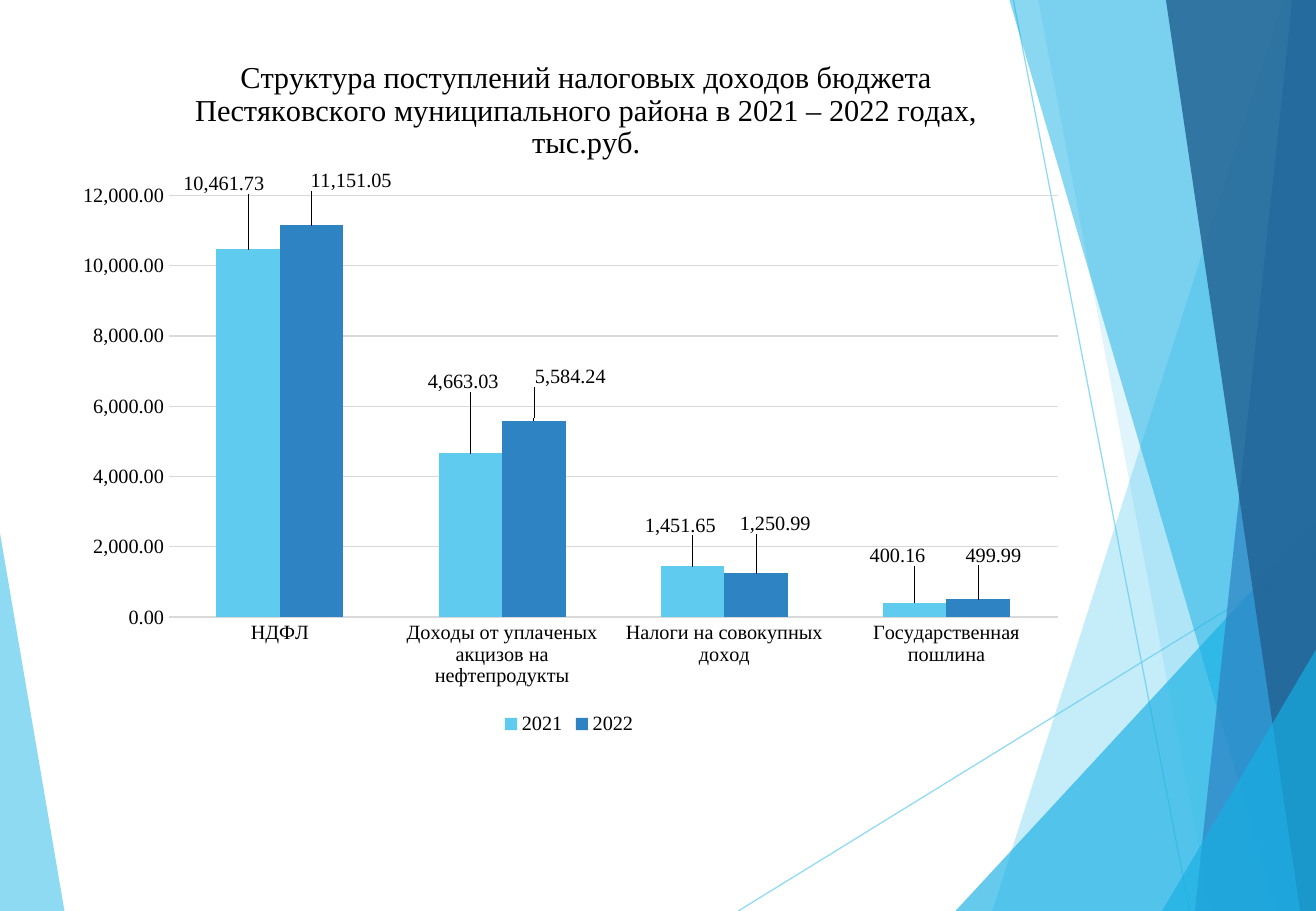
from dataclasses import dataclass

from lxml import etree
from pptx import Presentation
from pptx import util as u
from pptx.chart.data import CategoryChartData
from pptx.dml.color import RGBColor
from pptx.enum import chart as charts, shapes
from pptx.oxml import ns


@dataclass
class Theme:
    font: str = "Times New Roman"
    ink: str = "000000"
    grid: str = "D9D9D9"
    sky: str = "5FCBEF"
    cyan: str = "17B0E4"
    blue: str = "2E83C3"
    navy: str = "226292"
    title_size: int = 18
    label_size: int = 12


theme = Theme()

deck = Presentation()
deck.slide_width, deck.slide_height = u.Inches(10.83), u.Inches(7.5)
page = deck.slides.add_slide(deck.slide_layouts[6])


def at(x, y):
    return round(deck.slide_width * x / 100), round(deck.slide_height * y / 100)


def paint(fill, color, opacity):
    fill.solid()
    fill.fore_color.rgb = RGBColor.from_string(color)
    for tint in fill._xPr.iter(ns.qn("a:srgbClr")):
        etree.SubElement(tint, ns.qn("a:alpha"), val=str(opacity * 1000))


LEFT, RIGHT = 0, 100
rays = [((56.1, 100), (100, 60.9)), ((77, 0), (90.4, 100))]
facets = [
    (LEFT, (0, 58.5), (4.9, 100), theme.sky, 70),
    (RIGHT, (97.5, 0), (75.4, 100), theme.sky, 36),
    (RIGHT, (78.9, 0), (92, 100), theme.sky, 20),
    (RIGHT, (100, 57.2), (72.6, 100), theme.cyan, 66),
    (RIGHT, (76.7, 0), (97, 100), theme.cyan, 50),
    (RIGHT, (98.2, 0), (90.8, 100), theme.blue, 70),
    (RIGHT, (88.6, 0), (98.8, 100), theme.navy, 82),
    (RIGHT, (100, 71.3), (88.3, 100), theme.cyan, 66),
]

for start, end in rays:
    ray = page.shapes.add_connector(shapes.MSO_CONNECTOR.STRAIGHT, *at(*start), *at(*end))
    ray.line.width = u.Pt(0.75)
    paint(ray.line.fill, theme.sky, 70)
    etree.SubElement(ray._element.spPr, ns.qn("a:effectLst"))

for side, top, bottom, color, opacity in facets:
    outline = page.shapes.build_freeform(*at(*top), scale=1.0)
    outline.add_line_segments([at(*bottom), at(side, 100), at(side, top[1])], close=True)
    facet = outline.convert_to_shape()
    facet.shadow.inherit = False
    facet.line.fill.background()
    paint(facet.fill, color, opacity)

data = CategoryChartData(number_format="#,##0.00")
data.categories = [
    "НДФЛ",
    "Доходы от уплаченых акцизов на нефтепродукты",
    "Налоги на совокупных доход",
    "Государственная пошлина",
]
data.add_series("2021", [10461.73, 4663.03, 1451.65, 400.16])
data.add_series("2022", [11151.05, 5584.24, 1250.99, 499.99])
chart = page.shapes.add_chart(
    charts.XL_CHART_TYPE.COLUMN_CLUSTERED, *at(4.7, 3.9), *at(77.1, 77.3), data
).chart


def place(parent, index, **shares):
    for old in parent.findall(ns.qn("c:layout")):
        parent.remove(old)
    layout = etree.Element(ns.qn("c:layout"))
    manual = etree.SubElement(layout, ns.qn("c:manualLayout"))
    for key, value in shares.items():
        share = value if isinstance(value, str) else str(value / 100)
        etree.SubElement(manual, ns.qn(f"c:{key}"), val=share)
    parent.insert(index, layout)


chart.has_title = True
heading = chart.chart_title.text_frame
heading.text = (
    "Структура поступлений налоговых доходов бюджета "
    "Пестяковского муниципального района в 2021 – 2022 годах, тыс.руб."
)
title_font = heading.paragraphs[0].runs[0].font
title_font.size, title_font.bold = u.Pt(theme.title_size), False
place(chart.chart_title._element, 1, xMode="edge", yMode="edge", x=12.6, y=2.4)
place(chart._chartSpace.chart.plotArea, 0, layoutTarget="inner", xMode="edge",
      yMode="edge", x=10.55, y=22.7, w=87.6, h=59.9)

chart.has_legend = True
chart.legend.position = charts.XL_LEGEND_POSITION.BOTTOM
chart.legend.include_in_layout = False

values = chart.value_axis
values.minimum_scale, values.maximum_scale, values.major_unit = 0, 12000, 2000
values.tick_labels.number_format = "#,##0.00"
values.tick_labels.number_format_is_linked = False
values.major_gridlines.format.line.color.rgb = RGBColor.from_string(theme.grid)
values.major_gridlines.format.line.width = u.Pt(0.75)
for axis in (values, chart.category_axis):
    axis.major_tick_mark = charts.XL_TICK_MARK.NONE
    axis.format.line.fill.background()

plot = chart.plots[0]
plot.gap_width, plot.overlap, plot.vary_by_categories = 150, 0, False
label_shifts = [
    [(-2.4, -7.1), (-0.7, -8), (-1.2, -3.6), (-1.7, -4.5)],
    [(3.9, -4.1), (3.6, -4.1), (1.9, -4.8), (1.5, -4.1)],
]
fonts = [title_font, chart.font, chart.legend.font,
         values.tick_labels.font, chart.category_axis.tick_labels.font]
for series, color, shifts in zip(plot.series, (theme.sky, theme.blue), label_shifts):
    series.format.fill.solid()
    series.format.fill.fore_color.rgb = RGBColor.from_string(color)
    labels = series.data_labels
    labels.show_value = True
    labels.number_format, labels.number_format_is_linked = "#,##0.00", False
    fonts.append(labels.font)
    for number, (x, y) in enumerate(shifts):
        label = series.points[number].data_label
        label.position = charts.XL_LABEL_POSITION.OUTSIDE_END
        fonts.append(label.font)
        place(labels._element.findall(ns.qn("c:dLbl"))[number], 1, x=x, y=y)

for font in fonts:
    font.name = theme.font
    font.color.rgb = RGBColor.from_string(theme.ink)
    if font is not title_font:
        font.size = u.Pt(theme.label_size)

deck.save("out.pptx")
